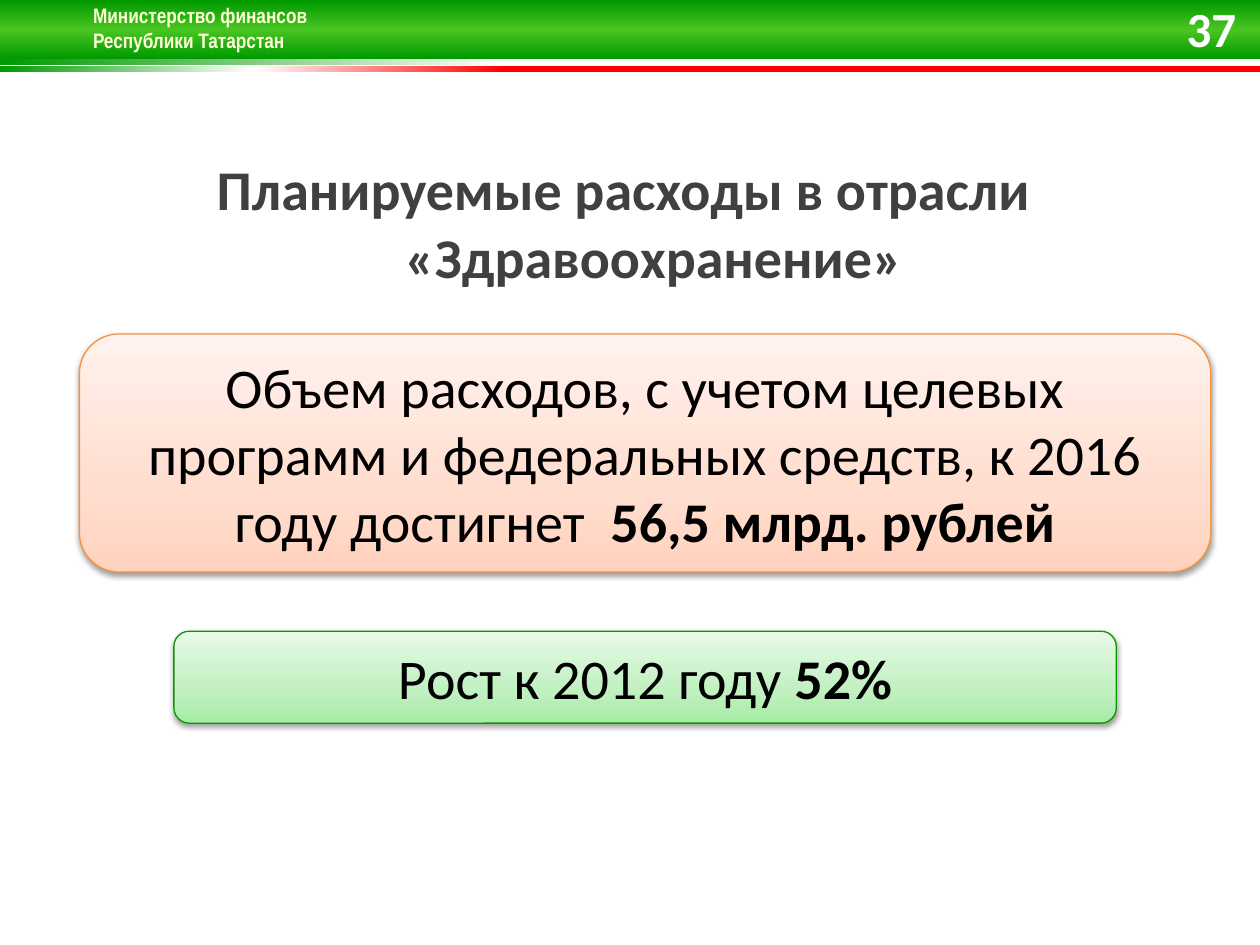
"""Build the slide on planned health care spending."""
import pptx
import pptx.util
import pptx.oxml
import pptx.oxml.ns
import pptx.dml.color
import pptx.enum.shapes
import pptx.enum.text

Inches, Pt = pptx.util.Inches, pptx.util.Pt
Align = pptx.enum.text.PP_ALIGN
Anchor = pptx.enum.text.MSO_ANCHOR
Kind = pptx.enum.shapes.MSO_SHAPE
SPACE = pptx.oxml.ns.nsdecls("a")


def hue(code):
    """Return a colour from its hex string."""
    return pptx.dml.color.RGBColor.from_string(code)


def blend(shape, stops, angle):
    """Fill a shape with a linear gradient, its angle clockwise."""
    marks = "".join(
        f'<a:gs pos="{pos * 1000}"><a:srgbClr val="{hue(code)}"/></a:gs>'
        for pos, code in stops)
    shape._element.spPr.insert(2, pptx.oxml.parse_xml(
        f'<a:gradFill {SPACE} rotWithShape="1"><a:gsLst>{marks}</a:gsLst>'
        f'<a:lin ang="{angle * 60000}" scaled="0"/></a:gradFill>'))


def shade(blur, dist, angle, alpha):
    """Return an outer shadow element in black."""
    return pptx.oxml.parse_xml(
        f'<a:outerShdw {SPACE} blurRad="{Pt(blur)}" dist="{Pt(dist)}" '
        f'dir="{angle * 60000}" algn="ctr" rotWithShape="0"><a:srgbClr val="000000">'
        f'<a:alpha val="{alpha * 1000}"/></a:srgbClr></a:outerShdw>')


def block(slide, kind, box, stops, angle):
    """Add a gradient shape without line or shadow."""
    shape = slide.shapes.add_shape(kind, *map(Inches, box))
    shape.shadow.inherit = False
    blend(shape, stops, angle)
    shape.line.fill.background()
    return shape


def write(para, text, size, color, bold=False, font="Calibri"):
    """Add one run to a paragraph."""
    run = para.add_run()
    run.text = text
    run.font.size = Pt(size)
    run.font.bold = bold
    run.font.color.rgb = hue(color)
    run.font.name = font
    return run


def label(slide, box, align, anchor=Anchor.TOP, wrap=True):
    """Add a text box and return its frame."""
    frame = slide.shapes.add_textbox(*map(Inches, box)).text_frame
    frame.word_wrap = wrap
    frame.vertical_anchor = anchor
    frame.paragraphs[0].alignment = align
    return frame


def card(slide, box, stops, edge, parts):
    """Add a rounded card whose text mixes plain and bold parts."""
    shape = block(slide, Kind.ROUNDED_RECTANGLE, box, stops, 270)
    shape.line.color.rgb = hue(edge)
    shape.line.width = Pt(0.75)
    shape._element.spPr[-1].append(shade(3.1, 1.6, 90, 38))
    frame = shape.text_frame
    frame.word_wrap = True
    frame.vertical_anchor = Anchor.MIDDLE
    para = frame.paragraphs[0]
    para.alignment = Align.CENTER
    for text, bold in parts:
        write(para, text, 32, "000000", bold)


def header(slide):
    """Add the green band, the stripes, the ministry and the number."""
    bands = [
        (0.47, 0.05, [(0, "FFFFFF"), (60, "FFFFFF"), (100, "009900")], 180),
        (0.52, 0.05, [(60, "FF0000"), (80, "FFFFFF"), (100, "009900")], 180),
        (0, 0.47, [(0, "009900"), (50, "49C522"), (100, "009900")], 90),
    ]
    for top, high, stops, angle in bands:
        block(slide, Kind.RECTANGLE, (0, top, 10, high), stops, angle)
    frame = label(slide, (0.64, -0.03, 1.92, 0.71), Align.LEFT, wrap=False)
    for row, text in enumerate(("Министерство финансов", "Республики Татарстан")):
        para = frame.add_paragraph() if row else frame.paragraphs[0]
        run = write(para, text, 12, "FFFFD9", True, "Arial Narrow")
        glow = pptx.oxml.parse_xml(f"<a:effectLst {SPACE}/>")
        glow.append(shade(3, 3, 45, 43))
        run.font._element.insert(1, glow)
    frame = label(slide, (9.27, 0.05, 0.64, 0.34), Align.RIGHT, Anchor.MIDDLE)
    write(frame.paragraphs[0], "37", 28, "FFFFFF", True)


def title(slide):
    """Add the heading with its hanging indent."""
    para = label(slide, (0, 1.18, 10, 1.47), Align.CENTER).paragraphs[0]
    props = para._p.get_or_add_pPr()
    props.set("marL", str(Inches(0.38)))
    props.set("indent", str(Inches(-0.38)))
    write(para, "Планируемые расходы в отрасли  «Здравоохранение»", 32, "404040", True)


def main():
    """Build and save the slide."""
    deck = pptx.Presentation()
    deck.slide_width, deck.slide_height = Inches(10), Inches(7.5)
    slide = deck.slides.add_slide(deck.slide_layouts[6])
    header(slide)
    title(slide)
    card(slide, (0.63, 2.65, 8.98, 1.89),
         [(0, "FFD2BD"), (35, "FFDED0"), (100, "FFF2ED")], "F69240",
         [("Объем расходов, с учетом целевых программ и федеральных средств, "
           "к 2016 году достигнет ", False), (" 56,5 млрд. рублей", True)])
    card(slide, (1.38, 5.01, 7.48, 0.73),
         [(0, "A5ECA5"), (35, "C1F0C1"), (100, "E7FAE7")], "0B9700",
         [("Рост к 2012 году ", False), ("52%", True)])
    deck.save("out.pptx")


if __name__ == "__main__":
    main()
